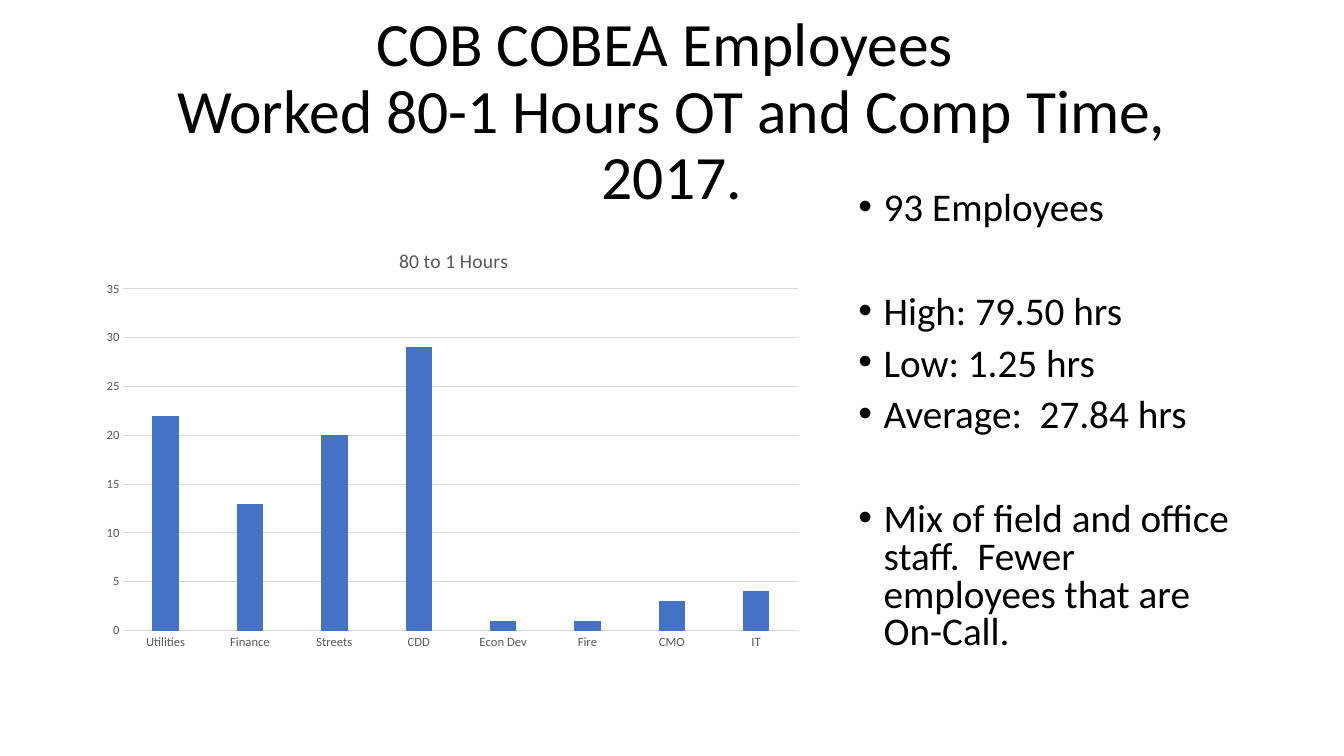
from lxml import etree
from pptx import Presentation
from pptx import util as u
from pptx.chart.data import CategoryChartData
from pptx.dml.color import RGBColor
from pptx.enum import chart as ch
from pptx.enum import text
from pptx.oxml.ns import qn

COLORS = {"text": "000000", "label": "595959", "line": "D9D9D9",
          "bar": "4472C4", "background": "FFFFFF"}
HOURS = {"Utilities": 22, "Finance": 13, "Streets": 20, "CDD": 29,
         "Econ Dev": 1, "Fire": 1, "CMO": 3, "IT": 4}
# Each bullet with its space before in points
BULLETS = [("93 Employees", 10), ("High: 79.50 hrs", 47.3), ("Low: 1.25 hrs", 10),
           ("Average:  27.84 hrs", 10),
           ("Mix of field and office staff.  Fewer employees that are On-Call.", 47.3)]


class SlideBuilder:
    font_name = "Calibri"

    def __init__(self, presentation):
        self.slide = presentation.slides.add_slide(presentation.slide_layouts[1])
        fill = self.slide.background.fill
        fill.solid()
        fill.fore_color.rgb = self.color("background")

    def color(self, name):
        return RGBColor.from_string(COLORS[name])

    def style(self, font, size, color="text"):
        font.name, font.size, font.bold = self.font_name, u.Pt(size), False
        font.color.rgb = self.color(color)

    def place(self, shape, left, top, width, height):
        shape.left, shape.top = u.Cm(left), u.Cm(top)
        shape.width, shape.height = u.Cm(width), u.Cm(height)
        shape.text_frame.word_wrap = True
        shape.text_frame.auto_size = text.MSO_AUTO_SIZE.NONE

    def title(self, words, *box):
        shape = self.slide.shapes.title
        self.place(shape, *box)
        shape.text_frame.vertical_anchor = text.MSO_ANCHOR.MIDDLE
        paragraph = shape.text_frame.paragraphs[0]
        paragraph.text = words
        paragraph.alignment = text.PP_ALIGN.CENTER
        paragraph.line_spacing = 0.9
        self.style(paragraph.font, 44)

    def bullets(self, items, *box):
        shape = self.slide.placeholders[1]
        self.place(shape, *box)
        frame = shape.text_frame
        frame.text = "\n".join(words for words, _ in items)
        for paragraph, (_, space) in zip(frame.paragraphs, items):
            paragraph.line_spacing = 0.8
            paragraph.space_before = u.Pt(space)
            self.style(paragraph.font, 28)
            # Hanging indent and bullet
            properties = paragraph._p.get_or_add_pPr()
            indent = u.Cm(0.635)
            properties.set("marL", str(indent))
            properties.set("indent", str(-indent))
            bullet_font = etree.Element(qn("a:buFont"), typeface="Arial")
            bullet = etree.Element(qn("a:buChar"), char="•")
            position = properties.index(properties.find(qn("a:defRPr")))
            properties[position:position] = [bullet_font, bullet]

    def axis(self, axis):
        axis.major_tick_mark = axis.minor_tick_mark = ch.XL_TICK_MARK.NONE
        self.style(axis.tick_labels.font, 9, "label")

    def line(self, line):
        line.color.rgb = self.color("line")
        line.width = u.Pt(0.75)

    def layout(self, parent, position, **fractions):
        """Fix the place of a chart part as fractions of the chart."""
        for old in parent.findall(qn("c:layout")):
            parent.remove(old)
        layout = etree.Element(qn("c:layout"))
        manual = etree.SubElement(layout, qn("c:manualLayout"))
        if "w" in fractions:
            etree.SubElement(manual, qn("c:layoutTarget"), val="inner")
        for side in "xy":
            etree.SubElement(manual, qn(f"c:{side}Mode"), val="edge")
        for name, value in fractions.items():
            etree.SubElement(manual, qn(f"c:{name}"), val=str(value))
        parent.insert(position, layout)

    def column_chart(self, heading, values, left, top, width, height):
        data = CategoryChartData()
        data.categories = list(values)
        data.add_series("Series 1", list(values.values()))
        chart = self.slide.shapes.add_chart(
            ch.XL_CHART_TYPE.COLUMN_CLUSTERED, u.Cm(left), u.Cm(top),
            u.Cm(width), u.Cm(height), data).chart
        self.style(chart.font, 10)
        chart.has_legend = False

        # Heading
        chart.has_title = True
        title = chart.chart_title
        title.include_in_layout = False
        title.text_frame.text = heading
        self.style(title.text_frame.paragraphs[0].font, 14, "label")
        self.layout(title._element, 1, x=0.42, y=0.05)

        # Columns
        plot = chart.plots[0]
        plot.gap_width, plot.overlap = 219, -27
        plot.vary_by_categories = False
        fill = plot.series[0].format.fill
        fill.solid()
        fill.fore_color.rgb = self.color("bar")

        # Axes and gridlines
        self.axis(chart.category_axis)
        self.line(chart.category_axis.format.line)
        value_axis = chart.value_axis
        self.axis(value_axis)
        value_axis.minimum_scale, value_axis.maximum_scale = 0, 35
        value_axis.major_unit = 5
        value_axis.format.line.fill.background()
        self.line(value_axis.major_gridlines.format.line)
        plot_area = chart._chartSpace.chart.plotArea
        self.layout(plot_area, 0, x=0.043, y=0.154, w=0.935, h=0.785)


def main():
    presentation = Presentation()
    presentation.slide_width, presentation.slide_height = u.Cm(33.87), u.Cm(19.05)
    builder = SlideBuilder(presentation)
    builder.title("COB COBEA Employees \vWorked 80-1 Hours OT and Comp Time, 2017.",
                  2.33, 1.01, 29.21, 3.68)
    builder.bullets(BULLETS, 21.38, 4.7, 10.16, 12.47)
    builder.column_chart("80 to 1 Hours", HOURS, 2.33, 5.59, 18.19, 10.97)
    presentation.save("out.pptx")


if __name__ == "__main__":
    main()
